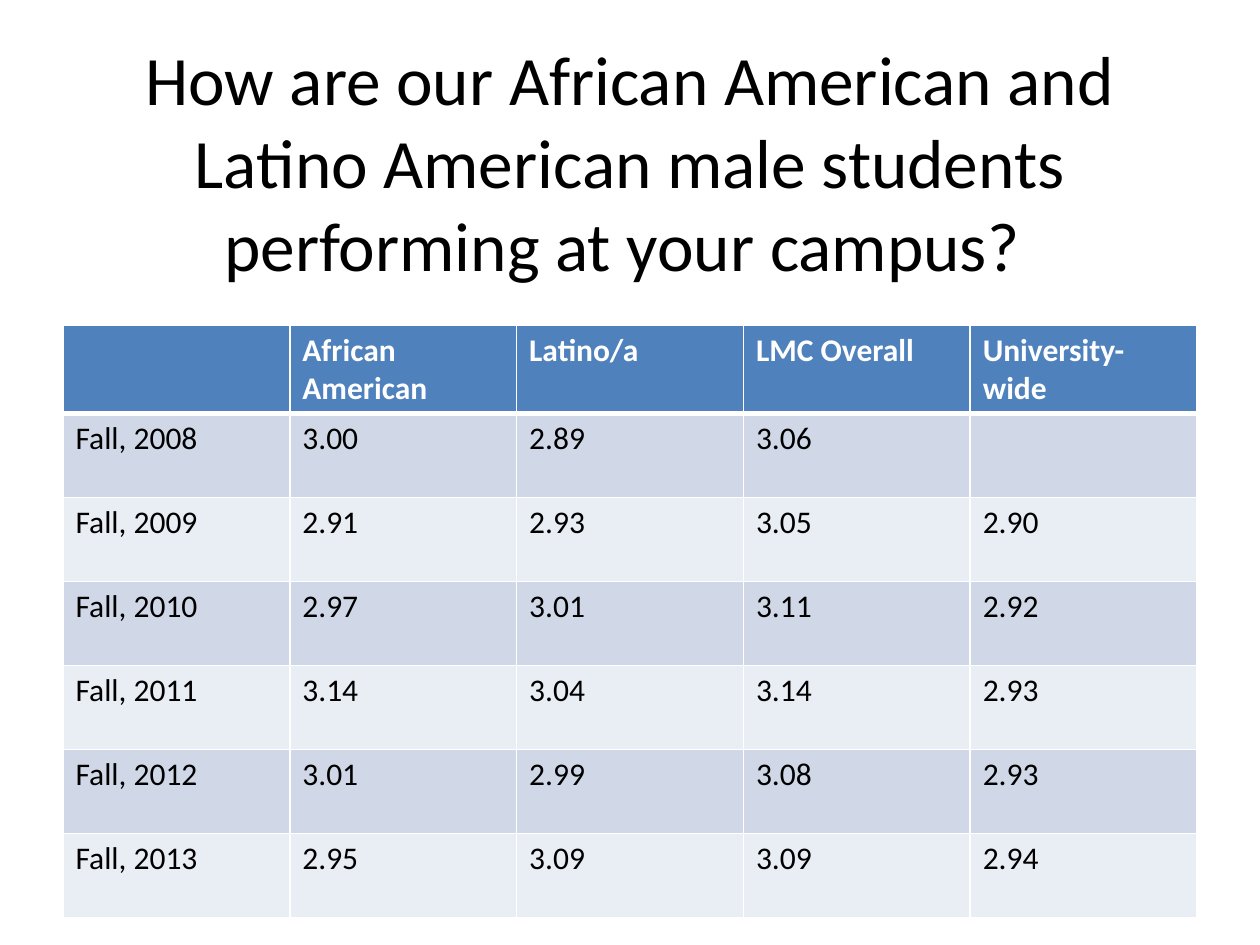
from lxml.etree import SubElement
from pptx import Presentation
from pptx.dml.color import RGBColor
from pptx.enum.text import MSO_ANCHOR, PP_ALIGN
from pptx.oxml.ns import qn
from pptx.util import Inches, Pt

FONT = "Calibri"
COLORS = {
    "text": "000000",
    "header": "4F81BD",
    "header_text": "FFFFFF",
    "band_dark": "D0D8E8",
    "band_light": "E9EDF4",
    "border": "FFFFFF",
}
TITLE = ("How are our African American and Latino American male students "
         "performing at your campus? ")
ROWS = [
    ["", "African American", "Latino/a", "LMC Overall", "University-wide"],
    ["Fall, 2008", "3.00", "2.89", "3.06", ""],
    ["Fall, 2009", "2.91", "2.93", "3.05", "2.90"],
    ["Fall, 2010", "2.97", "3.01", "3.11", "2.92"],
    ["Fall, 2011", "3.14", "3.04", "3.14", "2.93"],
    ["Fall, 2012", "3.01", "2.99", "3.08", "2.93"],
    ["Fall, 2013", "2.95", "3.09", "3.09", "2.94"],
]


def rgb(name):
    return RGBColor.from_string(COLORS[name])


def format_font(font, size, color, bold=False):
    font.name = FONT
    font.size = Pt(size)
    font.bold = bold
    font.color.rgb = rgb(color)


def add_title(slide, left, top, width, height):
    tf = slide.shapes.add_textbox(left, top, width, height).text_frame
    tf.word_wrap = True
    tf.vertical_anchor = MSO_ANCHOR.MIDDLE
    p = tf.paragraphs[0]
    p.text = TITLE
    p.alignment = PP_ALIGN.CENTER
    format_font(p.runs[0].font, 39.6, "text")


def add_border(cell, side, points):
    tc_pr = cell._tc.get_or_add_tcPr()
    ln = SubElement(tc_pr, qn(f"a:ln{side}"), w=str(Pt(points)))
    fill = SubElement(ln, qn("a:solidFill"))
    SubElement(fill, qn("a:srgbClr"), val=COLORS["border"])


def format_cell(cell, text, row):
    is_header = row == 0
    # Borders come before the fill in the cell's XML; a thick rule ends the header
    for side in "LRTB":
        thick = (row, side) in ((0, "B"), (1, "T"))
        add_border(cell, side, 3 if thick else 1)
    band = "band_dark" if row % 2 else "band_light"
    cell.fill.solid()
    cell.fill.fore_color.rgb = rgb("header" if is_header else band)

    p = cell.text_frame.paragraphs[0]
    p.text = text
    color = "header_text" if is_header else "text"
    for r in p.runs:
        format_font(r.font, 18, color, is_header)


def add_grades_table(slide, left, top, width, row_height):
    n_rows, n_cols = len(ROWS), len(ROWS[0])
    table = slide.shapes.add_table(n_rows, n_cols, left, top, width,
                                   row_height * n_rows).table
    for column in table.columns:
        column.width = width // n_cols
    for i, values in enumerate(ROWS):
        table.rows[i].height = row_height
        for j, text in enumerate(values):
            format_cell(table.cell(i, j), text, i)


def main():
    prs = Presentation()
    prs.slide_width, prs.slide_height = Inches(10), Inches(7.5)
    slide = prs.slides.add_slide(prs.slide_layouts[6])

    # Title and table share the same side margins
    margin = int(prs.slide_width * 0.05)
    width = prs.slide_width - 2 * margin
    add_title(slide, margin, int(prs.slide_height * 0.04),
              width, int(prs.slide_height * 0.26))
    add_grades_table(slide, margin, Inches(2.58), width, Inches(4.67) // len(ROWS))

    prs.save("out.pptx")


if __name__ == "__main__":
    main()
